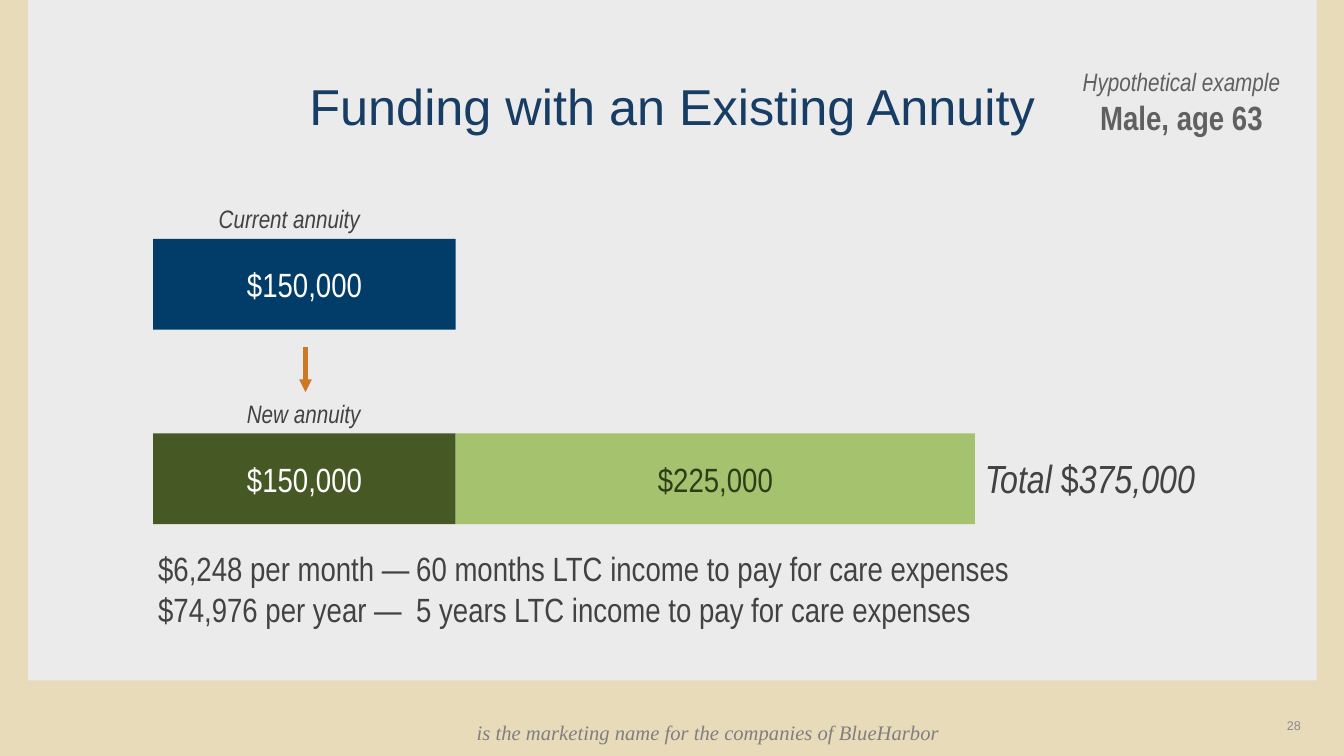
from lxml import etree
from pptx import Presentation
from pptx.dml.color import RGBColor
from pptx.enum.shapes import MSO_CONNECTOR, MSO_SHAPE
from pptx.enum.text import MSO_ANCHOR, PP_ALIGN
from pptx.oxml.ns import qn
from pptx.util import Inches, Pt

LEFT, CENTER, RIGHT = PP_ALIGN.LEFT, PP_ALIGN.CENTER, PP_ALIGN.RIGHT
TOP, MIDDLE, BOTTOM = MSO_ANCHOR.TOP, MSO_ANCHOR.MIDDLE, MSO_ANCHOR.BOTTOM
RECTANGLE, STRAIGHT = MSO_SHAPE.RECTANGLE, MSO_CONNECTOR.STRAIGHT

SLIDE_WIDTH, SLIDE_HEIGHT = 13.33, 7.5
NARROW = "Arial Narrow"
SAND, PANEL, GRAY = "E8DBBA", "EBEBEB", "424242"
NAVY, FOREST, LIME, ORANGE = "023D69", "465925", "A5C36E", "CD7824"
BAR_HEIGHT = 0.9


def color(value):
    """Turn a hex string into a colour."""
    return RGBColor.from_string(value)


def lengths(*values):
    """Turn inches into slide units."""
    return [Inches(value) for value in values]


def span(text, size, ink, font=NARROW, italic=False, bold=False):
    """Describe one run of text."""
    return text, size, ink, font, italic, bold


def write(frame, lines, align=LEFT, anchor=TOP, wrap=True, tab=None):
    """Fill a text frame with lines, each a list of spans."""
    frame.word_wrap = wrap
    frame.vertical_anchor = anchor
    for index, line in enumerate(lines):
        para = frame.paragraphs[0] if index == 0 else frame.add_paragraph()
        para.alignment = align
        if tab:
            stops = etree.SubElement(para._p.get_or_add_pPr(), qn("a:tabLst"))
            etree.SubElement(stops, qn("a:tab"), pos=str(Inches(tab)), algn="l")
        for text, size, ink, font, italic, bold in line:
            run = para.add_run()
            run.text = text
            run.font.size = Pt(size)
            run.font.name = font
            run.font.italic = italic
            run.font.bold = bold
            run.font.color.rgb = color(ink)


def add_text(page, box, lines, **layout):
    """Place a text box."""
    write(page.shapes.add_textbox(*lengths(*box)).text_frame, lines, **layout)


def add_block(page, box, fill, lines=()):
    """Place a plain filled rectangle with centred text."""
    block = page.shapes.add_shape(RECTANGLE, *lengths(*box))
    block.shadow.inherit = False
    block.fill.solid()
    block.fill.fore_color.rgb = color(fill)
    block.line.fill.background()
    write(block.text_frame, lines, align=CENTER, anchor=MIDDLE)


def add_arrow(page, x, top, bottom):
    """Draw a downward arrow."""
    arrow = page.shapes.add_connector(STRAIGHT, *lengths(x, top, x, bottom))
    arrow.line.color.rgb = color(ORANGE)
    arrow.line.width = Pt(3)
    etree.SubElement(arrow.line._get_or_add_ln(), qn("a:tailEnd"), type="triangle")
    etree.SubElement(arrow._element.spPr, qn("a:effectLst"))


def add_frame(page, box):
    """Draw the background, panel, footer and page number."""
    left, top, width, height = box
    page.background.fill.solid()
    page.background.fill.fore_color.rgb = color(SAND)
    add_block(page, (left + 0.28, top, width - 0.55, height * 0.9), PANEL)
    footer = "is the marketing name for the companies of BlueHarbor"
    add_text(page, (left + 4.63, top + height - 0.41, 6.6, 0.35),
             [[span(footer, 14.7, "7F7F7F", "Times New Roman", italic=True)]])
    add_text(page, (left + width - 1.89, top + height - 0.58, 1.56, 0.4),
             [[span("28", 9, "898989", "Arial")]], align=RIGHT, anchor=BOTTOM)


def add_heading(page, box):
    """Place the title and the example note at its right."""
    left, top, width, height = box
    add_text(page, box, [[span("Funding with an Existing Annuity", 36, "173D65", "Arial")]],
             align=CENTER, anchor=MIDDLE)
    add_text(page, (left + width * 0.8, top + 0.09, 2.9, 0.81),
             [[span("Hypothetical example", 18, "606060", italic=True)],
              [span("Male, age 63", 24, "606060", bold=True)]], align=CENTER)


def add_bar(page, box, caption, caption_left, caption_width, parts):
    """Place a captioned bar of adjoining parts and return its right edge."""
    left, top, width, height = box
    for amount, share, fill, ink in parts:
        add_block(page, (left, top, width * share, height), fill, [[span(amount, 24, ink)]])
        left += width * share
    add_text(page, (box[0] + caption_left, top - 0.4, caption_width, 0.4),
             [[span(caption, 18, GRAY, italic=True)]], wrap=False)
    return left


def add_comparison(page, box):
    """Place the current and new annuity bars, the arrow and the total."""
    left, top, width, height = box
    first = 3 / width
    new_top = top + height - BAR_HEIGHT
    add_bar(page, (left, top, width, BAR_HEIGHT), "Current annuity", 0.55, 1.62,
            [("$150,000", first, NAVY, "FFFFFF")])
    end = add_bar(page, (left, new_top, width, BAR_HEIGHT), "New annuity", 0.83, 1.34,
                  [("$150,000", first, FOREST, "FFFFFF"),
                   ("$225,000", 1 - first, LIME, "2F3C18")])
    add_arrow(page, left + 1.51, top + 1.07, new_top - 0.41)
    total = [span("Total ", 28, GRAY, italic=True), span("$", 28, GRAY),
             span("375,000", 28, GRAY, italic=True)]
    add_text(page, (end, new_top + 0.16, 2.39, 0.57), [total], wrap=False)


def add_income(page, box):
    """Place the two lines on income."""
    lines = ["$6,248 per month —\t60 months LTC income to pay for care expenses",
             "$74,976 per year —\t5 years LTC income to pay for care expenses"]
    add_text(page, box, [[span(line, 24, GRAY)] for line in lines], tab=2.56)


def main():
    """Build and save the deck."""
    deck = Presentation()
    deck.slide_width, deck.slide_height = lengths(SLIDE_WIDTH, SLIDE_HEIGHT)
    page = deck.slides.add_slide(deck.slide_layouts[6])
    add_frame(page, (0, 0, SLIDE_WIDTH, SLIDE_HEIGHT))
    add_heading(page, (0.67, 0.52, SLIDE_WIDTH * 0.9, SLIDE_HEIGHT * 0.14))
    add_comparison(page, (1.52, 2.37, 8.15, 2.83))
    add_income(page, (1.47, 5.39, 8.87, 0.91))
    deck.save("out.pptx")


if __name__ == "__main__":
    main()
